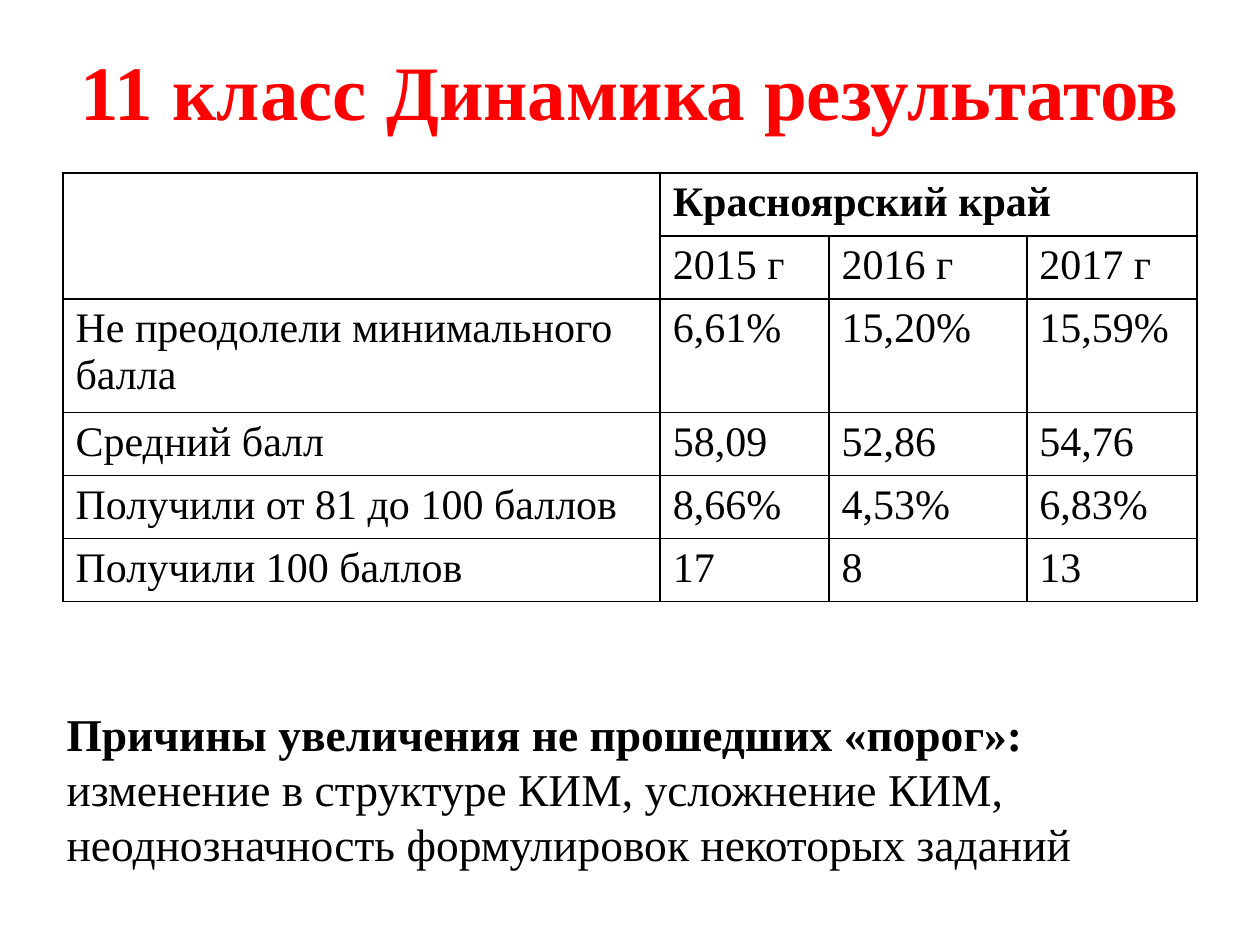
"""Build a slide on the dynamics of 11th-grade exam results."""
import pptx
import pptx.dml.color
import pptx.enum.text
import pptx.oxml
import pptx.oxml.ns
import pptx.util

COLORS = {"title": "FF0000", "text": "000000", "border": "000000"}
FONT = "Times New Roman"
ROWS = [
    ["", "Красноярский край", "", ""],
    ["", "2015 г", "2016 г", "2017 г"],
    ["Не преодолели минимального балла", "6,61%", "15,20%", "15,59%"],
    ["Средний балл", "58,09", "52,86", "54,76"],
    ["Получили от 81 до 100 баллов", "8,66%", "4,53%", "6,83%"],
    ["Получили 100 баллов", "17", "8", "13"],
]
COLUMN_WIDTHS = [4.74, 1.34, 1.57, 1.35]
ROW_HEIGHTS = [0.47, 0.47, 0.84, 0.47, 0.47, 0.47]


class ResultsSlide:
    def __init__(self, deck):
        self.width, self.height = deck.slide_width, deck.slide_height
        self.slide = deck.slides.add_slide(deck.slide_layouts[6])

    def area(self, left, top, width, height):
        return (int(left * self.width), int(top * self.height),
                int(width * self.width), int(height * self.height))

    def add_words(self, paragraph, words, color="text", **format_values):
        run = paragraph.add_run()
        run.text = words
        run.font.color.rgb = pptx.dml.color.RGBColor.from_string(COLORS[color])
        for key, value in {"name": FONT, "bold": False, **format_values}.items():
            setattr(run.font, key, value)

    def text(self, area, parts, size, color="text", align=None, anchor=None):
        frame = self.slide.shapes.add_textbox(*self.area(*area)).text_frame
        for key, value in {"word_wrap": True, "vertical_anchor": anchor}.items():
            setattr(frame, key, value)
        paragraph = frame.paragraphs[0]
        paragraph.alignment = align
        for words, bold in parts:
            self.add_words(paragraph, words, color, size=pptx.util.Pt(size), bold=bold)

    def border(self, cell):
        properties = cell._tc.get_or_add_tcPr()
        for position, side in enumerate(("lnL", "lnR", "lnT", "lnB")):
            properties.insert(position, pptx.oxml.parse_xml(
                f'<a:{side} {pptx.oxml.ns.nsdecls("a")} w="{pptx.util.Pt(1)}"><a:solidFill>'
                f'<a:srgbClr val="{COLORS["border"]}"/></a:solidFill></a:{side}>'))

    def table(self, area, rows, widths, heights, size):
        table = self.slide.shapes.add_table(len(rows), len(widths), *self.area(*area)).table
        for flag in ("first_row", "horz_banding"):
            setattr(table, flag, False)
        for column, width in zip(table.columns, widths):
            column.width = pptx.util.Inches(width)
        for row, height, values in zip(table.rows, heights, rows):
            row.height = pptx.util.Inches(height)
            for cell, value in zip(row.cells, values):
                cell.fill.background()
                self.border(cell)
                if value:
                    self.add_words(cell.text_frame.paragraphs[0], value,
                                   size=pptx.util.Pt(size), bold=values is rows[0])
        table.cell(0, 0).merge(table.cell(1, 0))
        table.cell(0, 1).merge(table.cell(0, 3))


def main():
    deck = pptx.Presentation()
    deck.slide_width, deck.slide_height = pptx.util.Inches(10), pptx.util.Inches(7.5)
    results = ResultsSlide(deck)
    results.text((0.05, 0.04, 0.9, 0.11), [("11 класс Динамика результатов", True)], 44, "title",
                 pptx.enum.text.PP_ALIGN.CENTER, pptx.enum.text.MSO_ANCHOR.MIDDLE)
    results.table((0.05, 0.183, 0.9, 0.425), ROWS, COLUMN_WIDTHS, ROW_HEIGHTS, 24)
    results.text((0.043, 0.741, 0.927, 0.188), [
        ("Причины увеличения не прошедших «порог»: ", True),
        ("изменение в структуре КИМ, усложнение КИМ, "
         "неоднозначность формулировок некоторых заданий", False)], 26)
    deck.save("out.pptx")


if __name__ == "__main__":
    main()
